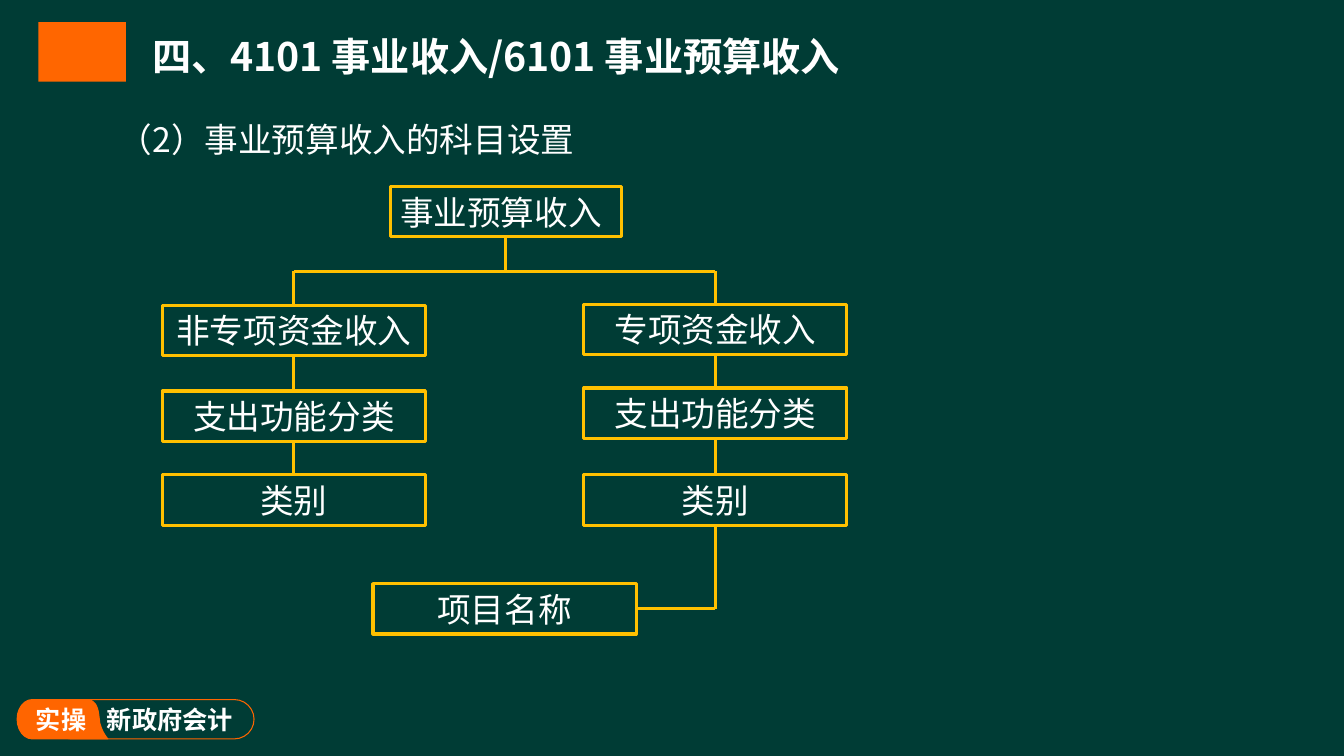
"""Build the account-structure slide for budget income from operations."""
import math
from dataclasses import dataclass

import pptx
import pptx.dml.color
import pptx.enum.shapes
import pptx.enum.text
import pptx.oxml.ns
import pptx.util
from lxml import etree

Inches = pptx.util.Inches
Pt = pptx.util.Pt
SHAPE = pptx.enum.shapes.MSO_SHAPE
ALIGN = pptx.enum.text.PP_ALIGN
ANCHOR = pptx.enum.text.MSO_ANCHOR
qn = pptx.oxml.ns.qn
rgb = pptx.dml.color.RGBColor.from_string


@dataclass(frozen=True)
class Theme:
    font: str = "Noto Sans CJK SC"
    background: str = "003C35"
    badge: str = "FF6500"
    marker: str = "FF6600"
    tree: str = "FFC000"
    text: str = "FFFFFF"
    title_size: int = 28
    body_size: int = 24
    badge_size: int = 18
    tree_line: float = 2.25
    badge_line: float = 0.75


def write(tf, text, size, bold=False, align=ALIGN.CENTER, anchor=ANCHOR.TOP, wrap=True):
    tf.word_wrap = wrap
    tf.auto_size = pptx.enum.text.MSO_AUTO_SIZE.NONE
    tf.vertical_anchor = anchor
    p = tf.paragraphs[0]
    p.alignment = align
    r = p.add_run()
    r.text = text
    r.font.size = Pt(size)
    r.font.bold = bold
    r.font.name = theme.font
    r.font.color.rgb = rgb(theme.text)
    etree.SubElement(r.font._element, qn("a:ea"), typeface=theme.font)
    return p


def paint(sp, fill=None, line=None, width=0):
    sp.shadow.inherit = False
    for part, color in ((sp.fill, fill), (sp.line.fill, line)):
        if color is None:
            part.background()
        else:
            part.solid()
            part.fore_color.rgb = rgb(color)
    if line:
        sp.line.width = Pt(width)


theme = Theme()
prs = pptx.Presentation()
prs.slide_width, prs.slide_height = Inches(13.33), Inches(7.5)
s = prs.slides.add_slide(prs.slide_layouts[5])
s.background.fill.solid()
s.background.fill.fore_color.rgb = rgb(theme.background)

outline = []
for step in range(13):
    angle = math.radians(270 - 15 * step)
    outline.append((0.32 + 0.15 * math.cos(angle), 7.135 + 0.195 * math.sin(angle)))
edge = [(1.07, 7.33), (1.02, 7.27), (1, 7.21), (0.99, 7.17), (0.98, 7.1),
        (0.98, 7.04), (0.95, 6.99), (0.93, 6.96), (0.9, 6.94), (0.87, 6.94)]
for start in (0, 3, 6):
    for step in range(9):
        t = step / 8
        weights = ((1 - t) ** 3, 3 * t * (1 - t) ** 2, 3 * t * t * (1 - t), t ** 3)
        curve = edge[start:start + 4]
        outline.append(tuple(sum(w * pt[axis] for w, pt in zip(weights, curve)) for axis in (0, 1)))
outline = [(Inches(x), Inches(y)) for x, y in outline]
fb = s.shapes.build_freeform(*outline[0])
fb.add_line_segments(outline[1:], close=True)
paint(fb.convert_to_shape(), fill=theme.badge, line=theme.badge, width=theme.badge_line)

sp = s.shapes.add_shape(SHAPE.ROUNDED_RECTANGLE, Inches(0.51), Inches(6.94), Inches(2.01), Inches(0.39))
sp.adjustments[0] = 0.5
paint(sp, line=theme.badge, width=theme.badge_line)

for text, left, width, wrap in (("实操", 0.25, 0.71, False), ("新政府会计", 0.85, 1.67, True)):
    sp = s.shapes.add_textbox(Inches(left), Inches(6.94), Inches(width), Inches(0.4))
    write(sp.text_frame, text, size=theme.badge_size, bold=True, wrap=wrap)

marker = s.shapes.add_shape(SHAPE.RECTANGLE, Inches(0.38), Inches(0.22), Inches(0.87), Inches(0.59))
paint(marker, fill=theme.marker)

title = s.shapes.title
title.left, title.top, title.width, title.height = map(Inches, (1.41, 0.18, 9.18, 0.74))
write(title.text_frame, "四、4101 事业收入/6101 事业预算收入", size=theme.title_size, bold=True,
      align=ALIGN.LEFT, anchor=ANCHOR.MIDDLE)

sp = s.shapes.add_textbox(Inches(0.41), Inches(0.93), Inches(10.18), Inches(0.8))
p = write(sp.text_frame, "（2）事业预算收入的科目设置", size=theme.body_size, align=ALIGN.LEFT)
p.line_spacing = 1.5
p._p.get_or_add_pPr().set("indent", str(Inches(0.67)))

box_w, box_h = 2.61, 0.5
left_x, right_x, item_x = 1.61, 5.79, 3.7
left_mid, right_mid = left_x + box_w / 2, right_x + box_w / 2
root_mid, root_y, bus_y, item_y = 5.01, 1.85, 2.69, 5.79
kind_y = 4.71
columns = [
    (left_x, [("非专项资金收入", 3.03), ("支出功能分类", 3.88), ("类别", kind_y)]),
    (right_x, [("专项资金收入", 3.02), ("支出功能分类", 3.85), ("类别", kind_y)]),
]
boxes = [("事业预算收入", 3.87, root_y, 2.29, ALIGN.LEFT),
         ("项目名称", item_x, item_y, box_w, ALIGN.CENTER)]
item_mid = item_y + box_h / 2
links = [(root_mid, root_y + box_h, root_mid, bus_y),
         (left_mid, bus_y, right_mid, bus_y),
         (right_mid, kind_y + box_h, right_mid, item_mid),
         (right_mid, item_mid, item_x + box_w, item_mid)]
for x, rows in columns:
    mid, above = x + box_w / 2, bus_y
    for text, y in rows:
        boxes.append((text, x, y, box_w, ALIGN.CENTER))
        links.append((mid, above, mid, y))
        above = y + box_h

for text, x, y, width, align in boxes:
    sp = s.shapes.add_shape(SHAPE.RECTANGLE, Inches(x), Inches(y), Inches(width), Inches(box_h))
    paint(sp, line=theme.tree, width=theme.tree_line)
    write(sp.text_frame, text, size=theme.body_size, align=align)

for link in links:
    cxn = s.shapes.add_connector(pptx.enum.shapes.MSO_CONNECTOR.STRAIGHT, *map(Inches, link))
    cxn.line.color.rgb = rgb(theme.tree)
    cxn.line.width = Pt(theme.tree_line)
    etree.SubElement(cxn._element.spPr, qn("a:effectLst"))

prs.save("out.pptx")
